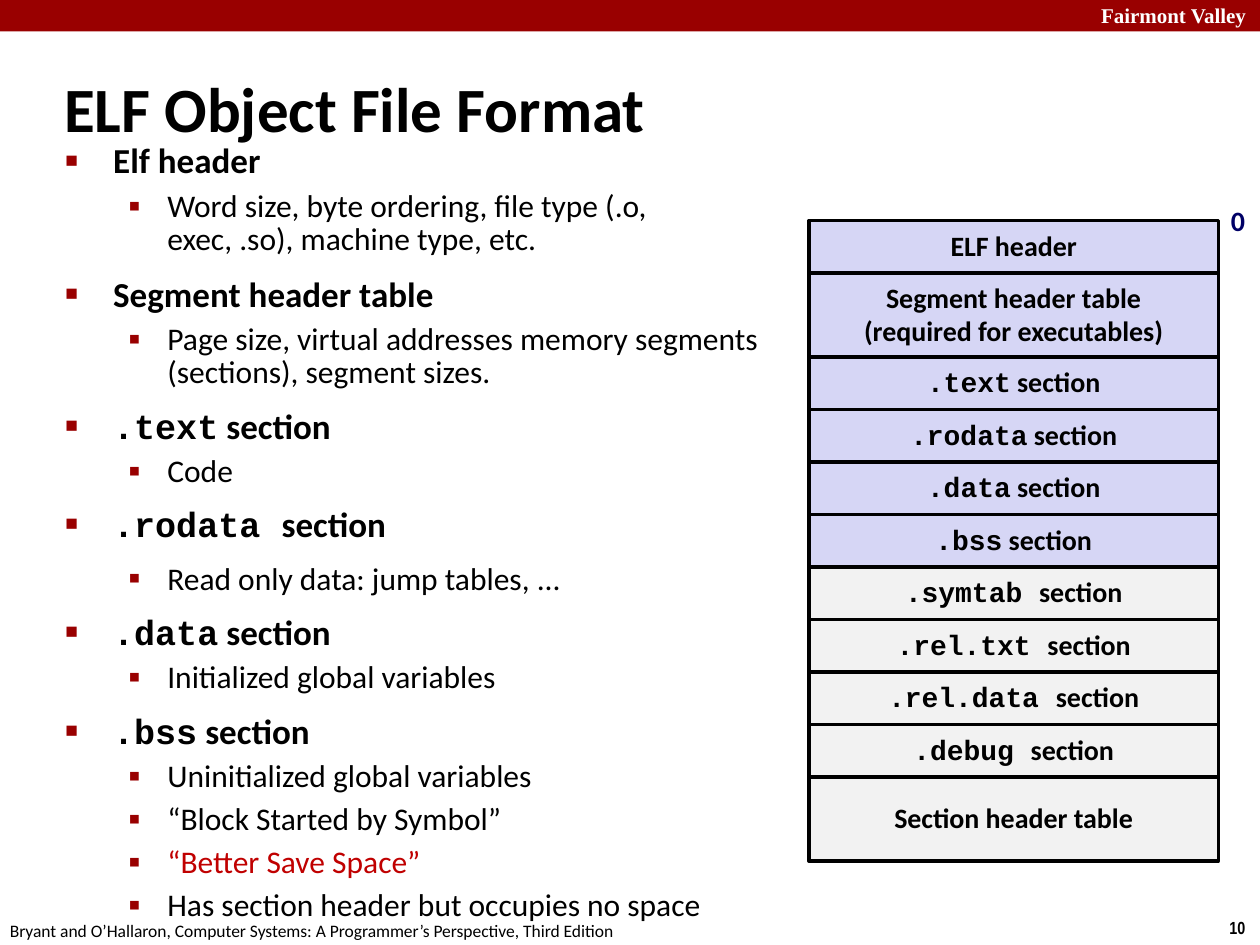
from lxml.etree import SubElement
from pptx import Presentation
from pptx.dml.color import RGBColor
from pptx.enum.shapes import MSO_SHAPE as Shape
from pptx.enum.text import MSO_ANCHOR as Anchor, MSO_AUTO_SIZE as AutoSize, PP_ALIGN as Align
from pptx.oxml.ns import qn
from pptx.util import Inches, Pt

COLORS = {"black": "000000", "white": "FFFFFF", "banner": "990000", "accent": "C00000",
          "offset": "000066", "loaded": "D6D6F5", "unloaded": "F2F2F2"}

# Content: text between backticks is set in the code font
TITLE = "ELF Object File Format"
SCHOOL = "Fairmont Valley"
CREDIT = "Bryant and O’Hallaron, Computer Systems: A Programmer’s Perspective, Third Edition"
PAGE = "10"

TOPICS = [
    ("Elf header",
     ["Word size, byte ordering, file type (.o, exec, .so), machine type, etc."]),
    ("Segment header table",
     ["Page size, virtual addresses memory segments (sections), segment sizes."]),
    ("`.text` section", ["Code"]),
    ("`.rodata `section", ["Read only data: jump tables, ..."]),
    ("`.data` section", ["Initialized global variables"]),
    ("`.bss` section",
     ["Uninitialized global variables", "“Block Started by Symbol”",
      "“Better Save Space”", "Has section header but occupies no space"]),
]
HIGHLIGHTED = "“Better Save Space”"
LOOSE = "Read only data: jump tables, ..."

ROW, TALL_ROW = 5 / 12, 2 / 3
SECTIONS = [  # lines, height, kind
    (["ELF header"], ROW, "loaded"),
    (["Segment header table", "(required for executables)"], TALL_ROW, "loaded"),
    (["`.text` section"], ROW, "loaded"),
    (["`.rodata` section"], ROW, "loaded"),
    (["`.data` section"], ROW, "loaded"),
    (["`.bss` section"], ROW, "loaded"),
    (["`.symtab `section"], ROW, "unloaded"),
    (["`.rel.txt `section"], ROW, "unloaded"),
    (["`.rel.data `section"], ROW, "unloaded"),
    (["`.debug `section"], ROW, "unloaded"),
    (["Section header table"], TALL_ROW, "unloaded"),
]
FILE_LEFT, FILE_TOP, FILE_WIDTH = 6.42, 1.75, 3.25


def rgb(name):
    return RGBColor.from_string(COLORS[name])


def write(paragraph, text, size, color="black", bold=False, font="Calibri",
          align=Align.LEFT, spacing=None, before=0):
    paragraph.alignment = align
    paragraph.space_before = Pt(before)
    if spacing:
        paragraph.line_spacing = spacing
    for i, part in enumerate(text.split("`")):
        if part:
            run = paragraph.add_run()
            run.text = part
            run.font.size = Pt(size)
            run.font.bold = bold
            run.font.name = "Courier New" if i % 2 else font
            run.font.color.rgb = rgb(color)


def add_bullet(paragraph, symbol, percent, left, hanging):
    props = paragraph._p.get_or_add_pPr()
    props.set("marL", str(Inches(left)))
    props.set("indent", str(-Inches(hanging)))
    SubElement(SubElement(props, qn("a:buClr")), qn("a:srgbClr"), val=COLORS["banner"])
    SubElement(props, qn("a:buSzPct"), val=str(percent * 1000))
    SubElement(props, qn("a:buFont"), typeface="Arial")
    SubElement(props, qn("a:buChar"), char=symbol)


def add_box(slide, left, top, width, height, wrap=False):
    box = slide.shapes.add_textbox(*map(Inches, (left, top, width, height)))
    box.text_frame.word_wrap = wrap
    return box.text_frame


def add_rect(slide, left, top, width, height, fill):
    rect = slide.shapes.add_shape(
        Shape.RECTANGLE, *map(Inches, (left, top, width, height)))
    rect.shadow.inherit = False
    rect.fill.solid()
    rect.fill.fore_color.rgb = rgb(fill)
    rect.line.fill.background()
    return rect


def next_paragraph(frame):
    first = frame.paragraphs[0]
    return frame.add_paragraph() if first.runs else first


def add_topics(slide):
    frame = add_box(slide, 0.42, 1.11, 5.85, 5.89, wrap=True)
    for heading, details in TOPICS:
        paragraph = next_paragraph(frame)
        write(paragraph, heading, 20, bold=True, before=12.5,
              spacing=0.8 if "`" in heading else 0.83)
        add_bullet(paragraph, "■", 60, 0.38, 0.38)
        for detail in details:
            paragraph = next_paragraph(frame)
            spacing, before = (0.8, 12.5) if detail == LOOSE else (0.88, 5.6)
            write(paragraph, detail, 18, spacing=spacing, before=before,
                  color="accent" if detail == HIGHLIGHTED else "black")
            paragraph.level = 1
            add_bullet(paragraph, "▪", 110, 0.81, 0.31)


def add_file_layout(slide):
    top = FILE_TOP
    for lines, height, kind in SECTIONS:
        section = add_rect(slide, FILE_LEFT, top, FILE_WIDTH, height, kind)
        section.line.color.rgb = rgb("black")
        section.line.width = Pt(2)
        frame = section.text_frame
        frame.word_wrap = False
        frame.vertical_anchor = Anchor.MIDDLE
        for line in lines:
            write(next_paragraph(frame), line, 16, bold=True, align=Align.CENTER,
                  spacing=0.94 if "`" in line else 0.98)
        top += height
    offset = add_box(slide, FILE_LEFT + FILE_WIDTH, 1.58, 0.31, 0.37)
    write(offset.paragraphs[0], "0", 16, color="offset", bold=True, spacing=0.98)


def main():
    deck = Presentation()
    deck.slide_width, deck.slide_height = Inches(10), Inches(7.5)
    slide = deck.slides.add_slide(deck.slide_layouts[5])

    # Banner and footer
    add_rect(slide, 0, 0, 10, 0.25, "banner")
    school = add_box(slide, 8.64, -0.03, 1.43, 0.3)
    write(school.paragraphs[0], SCHOOL, 12, color="white", bold=True, font="Times New Roman")
    page = add_box(slide, 9.66, 7.23, 0.34, 0.27)
    write(page.paragraphs[0], PAGE, 10, bold=True, font="Arial Narrow")
    credit = add_box(slide, -0.02, 7.25, 5.08, 0.27)
    write(credit.paragraphs[0], CREDIT, 10)

    # Title
    title = slide.shapes.title
    title.left, title.top, title.width, title.height = map(Inches, (0.41, 0.42, 9.53, 0.86))
    title.text_frame.vertical_anchor = Anchor.MIDDLE
    title.text_frame.auto_size = AutoSize.NONE
    write(title.text_frame.paragraphs[0], TITLE, 36, bold=True)

    add_topics(slide)
    add_file_layout(slide)
    deck.save("out.pptx")


if __name__ == "__main__":
    main()
